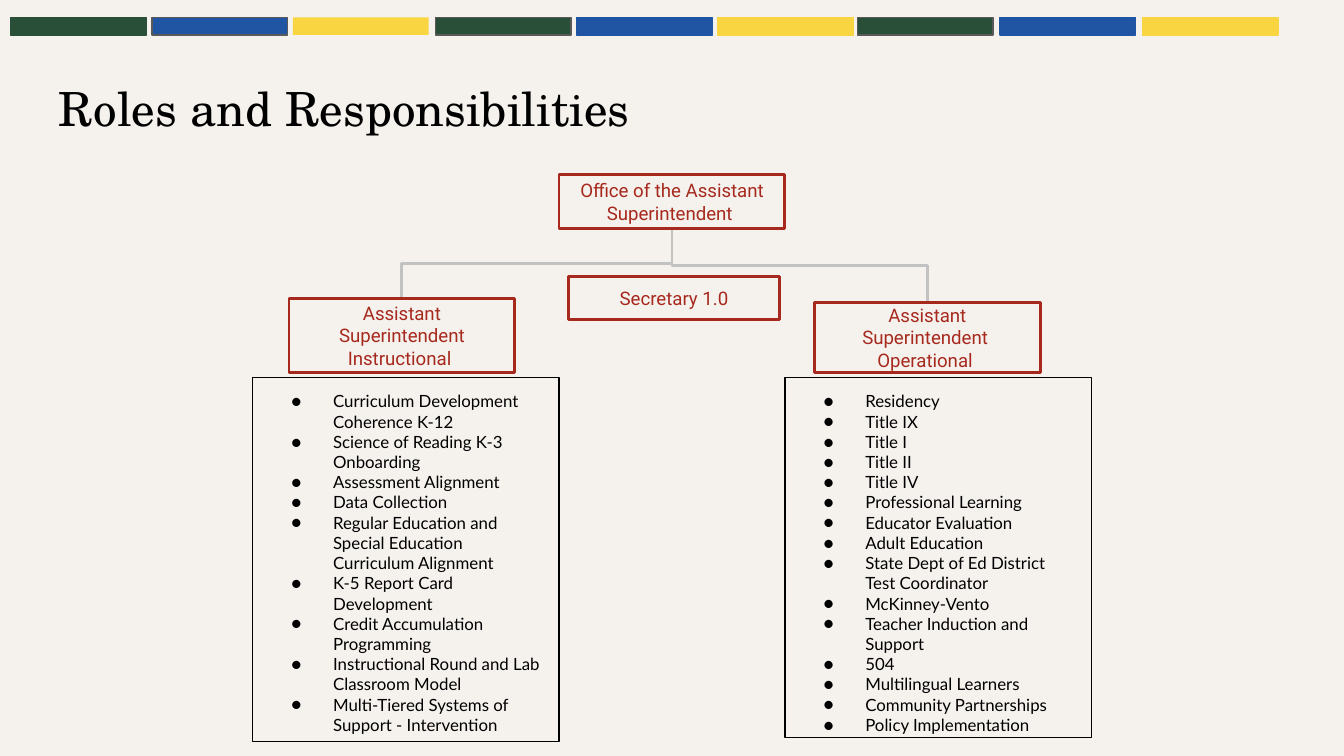
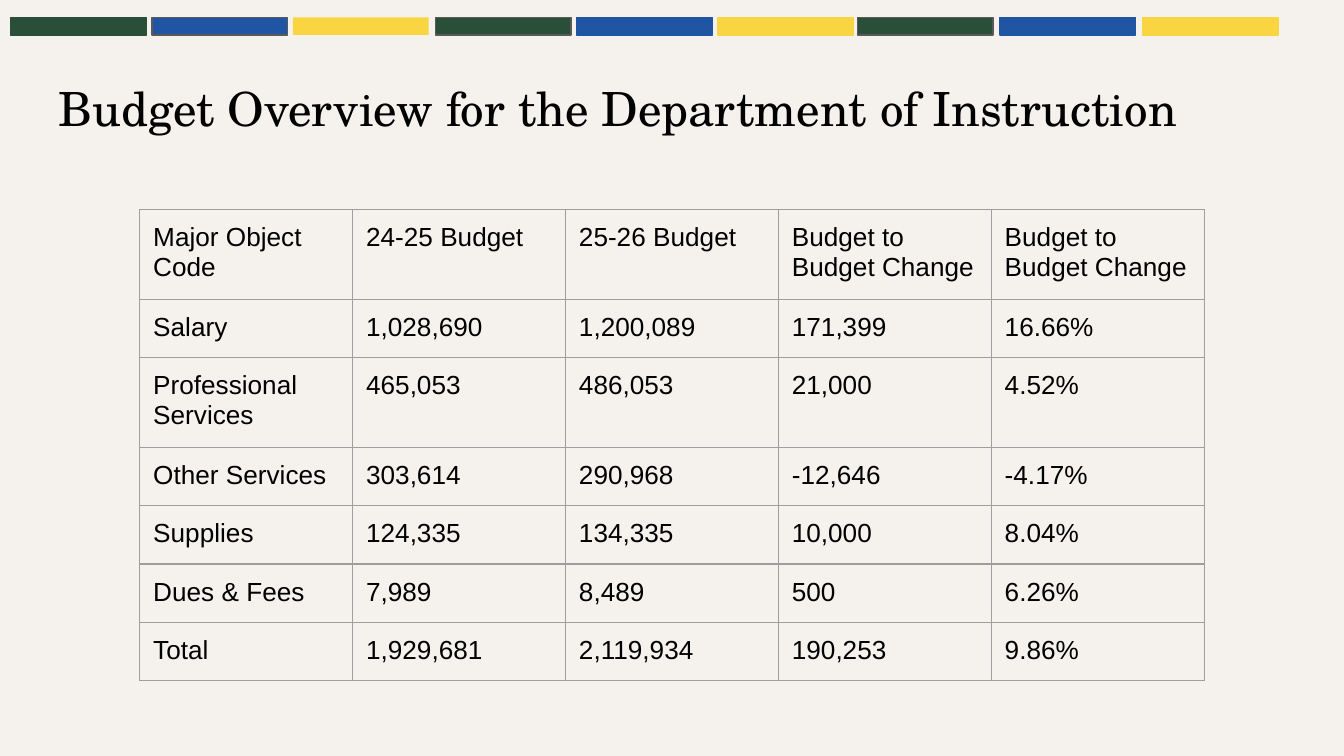
from dataclasses import dataclass
from lxml.etree import SubElement
from pptx import Presentation
from pptx.dml.color import RGBColor
from pptx.enum.shapes import MSO_CONNECTOR, MSO_SHAPE
from pptx.enum.text import MSO_ANCHOR, PP_ALIGN
from pptx.oxml import parse_xml
from pptx.oxml.ns import nsdecls, qn
from pptx.util import Inches, Pt


@dataclass
class Theme:
    paper: str = "F5F2EE"
    ink: str = "000000"
    green: str = "2A4F39"
    blue: str = "1F55A2"
    gold: str = "F9D542"
    edge: str = "595959"
    red: str = "A7291E"
    link: str = "C2C2C2"
    grid: str = "9E9E9E"
    head: tuple = ("TeX Gyre Schola", 25.2)
    role: tuple = ("Roboto", 10)
    duty: tuple = ("Lato", 9)
    cell: tuple = ("Arial", 14)


theme = Theme()


def write(frame, lines, font, color, align=PP_ALIGN.LEFT, bullet=False):
    name, size = font
    frame.word_wrap = True
    frame.margin_left = frame.margin_right = Inches(0.1)
    frame.margin_top = frame.margin_bottom = Inches(0.1)
    frame.text = "\n".join(lines)
    for para in frame.paragraphs:
        if bullet:
            props = para._p.get_or_add_pPr()
            props.set("marL", str(Inches(0.5)))
            props.set("indent", str(Inches(-0.31)))
            tint = SubElement(props, qn("a:buClr"))
            SubElement(tint, qn("a:srgbClr")).set("val", color)
            SubElement(props, qn("a:buSzPts")).set("val", str(size * 100))
            SubElement(props, qn("a:buFont")).set("typeface", name)
            SubElement(props, qn("a:buChar")).set("char", "●")
        para.alignment = align
        for run in para.runs:
            run.font.name = name
            run.font.size = Pt(size)
            run.font.color.rgb = RGBColor.from_string(color)


def box(slide, place, fill=None, line=None, width=0.75):
    shape = slide.shapes.add_shape(MSO_SHAPE.RECTANGLE, *map(Inches, place))
    shape.shadow.inherit = False
    if fill:
        shape.fill.solid()
        shape.fill.fore_color.rgb = RGBColor.from_string(fill)
    else:
        shape.fill.background()
    if line:
        shape.line.color.rgb = RGBColor.from_string(line)
        shape.line.width = Pt(width)
    else:
        shape.line.fill.background()
    return shape


deck = Presentation()
deck.slide_width = Inches(10)
deck.slide_height = deck.slide_width * 9 // 16

fills = [theme.green, theme.blue, theme.gold] * 3
edges = [theme.green, theme.edge, None, theme.edge, theme.blue,
         theme.gold, theme.edge, theme.blue, theme.gold]
lefts = [0.08, 1.13, 2.18, 3.24, 4.29, 5.34, 6.38, 7.44, 8.5]
slides = []
for title in ["Roles and Responsibilities",
              "Budget Overview for the Department of Instruction"]:
    slide = deck.slides.add_slide(deck.slide_layouts[6])
    slide.background.fill.solid()
    slide.background.fill.fore_color.rgb = RGBColor.from_string(theme.paper)
    for left, fill, edge in zip(lefts, fills, edges):
        box(slide, (left, 0.13, 1.01, 0.13), fill, edge)
    head = slide.shapes.add_textbox(*map(Inches, (0.34, 0.49, 9.32, 0.63)))
    write(head.text_frame, [title], theme.head, theme.ink)
    slides.append(slide)
chart, budget = slides

mid, base = 5, 1.7
for x, y in [(6.9, 2.25), (2.99, 2.22)]:
    wide, tall = abs(x - mid), y - base
    left = (x + mid - tall) / 2
    top = (y + base - wide) / 2
    ends = (left, left + tall) if x < mid else (left + tall, left)
    link = chart.shapes.add_connector(
        MSO_CONNECTOR.ELBOW, Inches(ends[0]), Inches(top),
        Inches(ends[1]), Inches(top + wide))
    props = link.element.spPr
    props.find(qn("a:xfrm")).set("rot", str(270 * 60000))
    link.line.color.rgb = RGBColor.from_string(theme.link)
    link.line.width = Pt(1.5)
    SubElement(props, qn("a:effectLst"))

roles = [
    ((4.16, 1.3, 1.68, 0.4), ["Office of the Assistant Superintendent "]),
    ((2.15, 2.22, 1.68, 0.55), ["Assistant Superintendent Instructional "]),
    ((6.06, 2.25, 1.68, 0.52), ["Assistant Superintendent ", "Operational "]),
    ((4.23, 2.06, 1.57, 0.32), ["Secretary 1.0"]),
]
duties = [
    ((1.88, 2.81, 2.28, 2.71), [
        "Curriculum Development Coherence K-12",
        "Science of Reading K-3 Onboarding",
        "Assessment Alignment",
        "Data Collection",
        "Regular Education and Special Education Curriculum Alignment",
        "K-5 Report Card Development",
        "Credit Accumulation Programming",
        "Instructional Round and Lab Classroom Model",
        "Multi-Tiered Systems of Support - Intervention",
    ]),
    ((5.84, 2.81, 2.28, 2.68), [
        "Residency",
        "Title IX",
        "Title I",
        "Title II",
        "Title IV",
        "Professional Learning",
        "Educator Evaluation",
        "Adult Education",
        "State Dept of Ed District Test Coordinator",
        "McKinney-Vento",
        "Teacher Induction and Support",
        "504",
        "Multilingual Learners",
        "Community Partnerships",
        "Policy Implementation",
    ]),
]
for place, lines in roles:
    frame = box(chart, place, line=theme.red, width=1.5).text_frame
    frame.vertical_anchor = MSO_ANCHOR.MIDDLE
    write(frame, lines, theme.role, theme.red, PP_ALIGN.CENTER)
for place, lines in duties:
    frame = box(chart, place, line=theme.ink).text_frame
    frame.vertical_anchor = MSO_ANCHOR.TOP
    write(frame, lines, theme.duty, theme.ink, bullet=True)

rows = [
    ["Major Object Code", "24-25 Budget", "25-26 Budget",
     "Budget to Budget Change", "Budget to Budget Change"],
    ["Salary", "1,028,690", "1,200,089", "171,399", "16.66%"],
    ["Professional Services", "465,053", "486,053", "21,000", "4.52%"],
    ["Other Services", "303,614", "290,968", "-12,646", "-4.17%"],
    ["Supplies", "124,335", "134,335", "10,000", "8.04%"],
    ["Dues & Fees", "7,989", "8,489", "500", "6.26%"],
    ["Total", "1,929,681", "2,119,934", "190,253", "9.86%"],
]
sheet = budget.shapes.add_table(
    len(rows), len(rows[0]), Inches(1.04), Inches(1.56),
    Inches(3.28), Inches(3.28))
table = sheet.table
table.first_row = table.horz_banding = False
for col in table.columns:
    col.width = Inches(7.92 / len(rows[0]))
for row, texts in zip(table.rows, rows):
    row.height = Inches(0.42)
    for cell, text in zip(row.cells, texts):
        write(cell.text_frame, [text], theme.cell, theme.ink)
        cell.margin_left = cell.margin_right = Inches(0.1)
        cell.margin_top = cell.margin_bottom = Inches(0.1)
        props = cell._tc.get_or_add_tcPr()
        for side in "LRTB":
            props.append(parse_xml(
                f'<a:ln{side} {nsdecls("a")} w="{Pt(0.75)}"><a:solidFill>'
                f'<a:srgbClr val="{theme.grid}"/></a:solidFill></a:ln{side}>'))
        cell.fill.background()
sheet.width = sheet.height = Inches(3.28)

deck.save("out.pptx")
